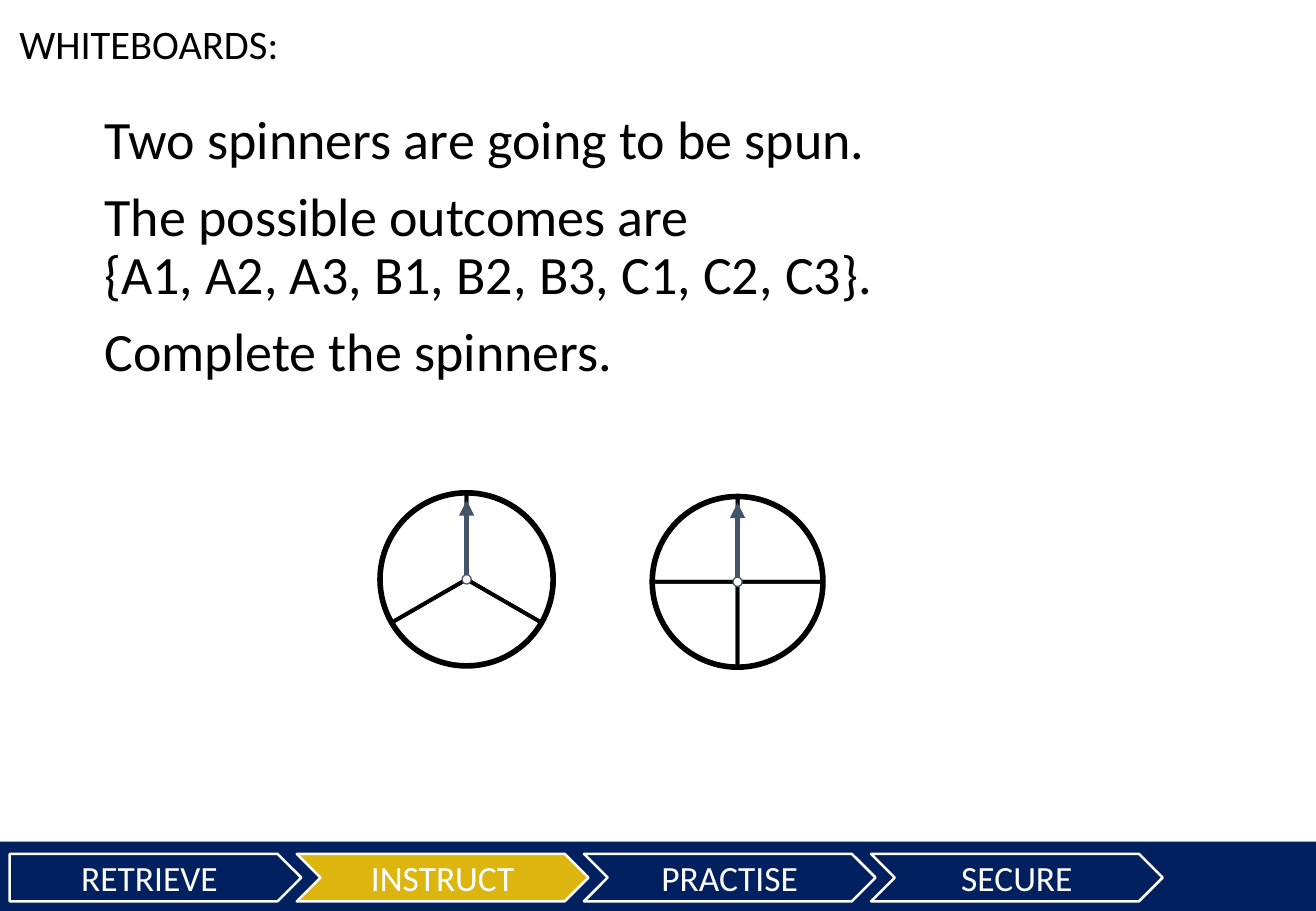
from typing import NamedTuple

from lxml import etree
from pptx import Presentation
from pptx.dml.color import RGBColor
from pptx.enum.shapes import MSO_CONNECTOR, MSO_SHAPE
from pptx.enum.text import MSO_ANCHOR, PP_ALIGN
from pptx.oxml.ns import qn
from pptx.util import Inches, Pt

RECT, OVAL, PIE = MSO_SHAPE.RECTANGLE, MSO_SHAPE.OVAL, MSO_SHAPE.PIE
PLATE, CHEVRON = MSO_SHAPE.PENTAGON, MSO_SHAPE.CHEVRON
STRAIGHT = MSO_CONNECTOR.STRAIGHT
CENTER, LEFT = PP_ALIGN.CENTER, PP_ALIGN.LEFT
MIDDLE, TOP = MSO_ANCHOR.MIDDLE, MSO_ANCHOR.TOP

# Square grid, ten cells to the inch
CELL = Inches(0.1)
COLS, ROWS = 108.3, 75
FONT = "Calibri"
HEX = {"navy": "002060", "gold": "DCB50E", "white": "FFFFFF",
       "black": "000000", "slate": "44546A"}


class Box(NamedTuple):
    col: float
    row: float
    wide: float
    high: float


class Step(NamedTuple):
    label: str
    kind: int
    fill: str


class Spinner(NamedTuple):
    col: float
    row: float
    radius: float
    sectors: int


STEPS = [Step("RETRIEVE", PLATE, "navy"), Step("INSTRUCT", CHEVRON, "gold"),
         Step("PRACTISE", CHEVRON, "navy"), Step("SECURE", CHEVRON, "navy")]
SPINNERS = [Spinner(38.4, 47.7, 7.2, 3), Spinner(60.7, 47.9, 7.1, 4)]
TASK = ["Two spinners are going to be spun.",
        "The possible outcomes are\v{A1, A2, A3, B1, B2, B3, C1, C2, C3}.",
        "Complete the spinners."]


def cells(count: float) -> int:
    return round(count * CELL)


def color(name: str) -> RGBColor:
    return RGBColor.from_string(HEX[name])


def add_form(slide, kind, box: Box, fill="", line="", weight=0.0):
    shape = slide.shapes.add_shape(kind, *map(cells, box))
    shape.shadow.inherit = False
    if fill:
        shape.fill.solid()
        shape.fill.fore_color.rgb = color(fill)
    else:
        shape.fill.background()
    if line:
        shape.line.color.rgb = color(line)
        shape.line.width = Pt(weight)
    else:
        shape.line.fill.background()
    return shape


def write(shape, lines: list[str], size: float, ink: str, align=CENTER,
          anchor=MIDDLE, wrap=True, gap=0.0, lead=1.0) -> None:
    frame = shape.text_frame
    frame.word_wrap = wrap
    frame.vertical_anchor = anchor
    frame.margin_left = frame.margin_right = 0
    frame.margin_top = frame.margin_bottom = 0
    for i, line in enumerate(lines):
        para = frame.add_paragraph() if i else frame.paragraphs[0]
        para.text = line
        para.alignment = align
        para.line_spacing = lead
        para.space_before = Pt(gap if i else 0)
        para.font.name = FONT
        para.font.size = Pt(size)
        para.font.color.rgb = color(ink)


def disc(col: float, row: float, radius: float) -> Box:
    return Box(col - radius, row - radius, 2 * radius, 2 * radius)


def add_spinner(slide, spin: Spinner) -> None:
    # Rim and equal sectors, counted from the top
    add_form(slide, OVAL, disc(spin.col, spin.row, spin.radius),
             line="black", weight=2.25)
    sweep = 360 / spin.sectors
    inner = disc(spin.col, spin.row, spin.radius - 0.15)
    for i in range(spin.sectors):
        pie = add_form(slide, PIE, inner, line="black", weight=2.25)
        for side in (0, 1):
            angle = (270 + (i + side) * sweep) % 360
            pie.adjustments[side] = angle * 0.6

    # Pointer and hub
    x, y = cells(spin.col), cells(spin.row)
    arrow = slide.shapes.add_connector(
        STRAIGHT, x, y, x, cells(spin.row - 6.5))
    arrow.line.color.rgb = color("slate")
    arrow.line.width = Pt(3)
    props = arrow._element.spPr
    etree.SubElement(props.find(qn("a:ln")), qn("a:tailEnd"),
                     type="triangle")
    etree.SubElement(props, qn("a:effectLst"))
    add_form(slide, OVAL, disc(spin.col, spin.row, 0.38), "white",
             "slate", 0.75)


def main() -> None:
    deck = Presentation()
    deck.slide_width, deck.slide_height = cells(COLS), cells(ROWS)
    slide = deck.slides.add_slide(deck.slide_layouts[6])

    # Progress bar
    add_form(slide, RECT, Box(0, 69.3, COLS, 5.7), "navy")
    for i, step in enumerate(STEPS):
        box = Box(0.8 + 23.63 * i, 70.3, 24, 3.9)
        tab = add_form(slide, step.kind, box, step.fill, "white", 1.5)
        write(tab, [step.label], 21, "white")

    # Task
    body = slide.shapes.add_textbox(*map(cells, Box(8.6, 9.3, 97.6, 23.9)))
    write(body, TASK, 32, "black", LEFT, TOP, gap=10.8, lead=0.9)

    # Spinners
    for spin in SPINNERS:
        add_spinner(slide, spin)

    # Heading
    head = add_form(slide, RECT, Box(0.8, 1.2, 22.9, 4.7), "white")
    write(head, ["WHITEBOARDS:"], 24, "black", wrap=False)

    deck.save("out.pptx")


if __name__ == "__main__":
    main()
